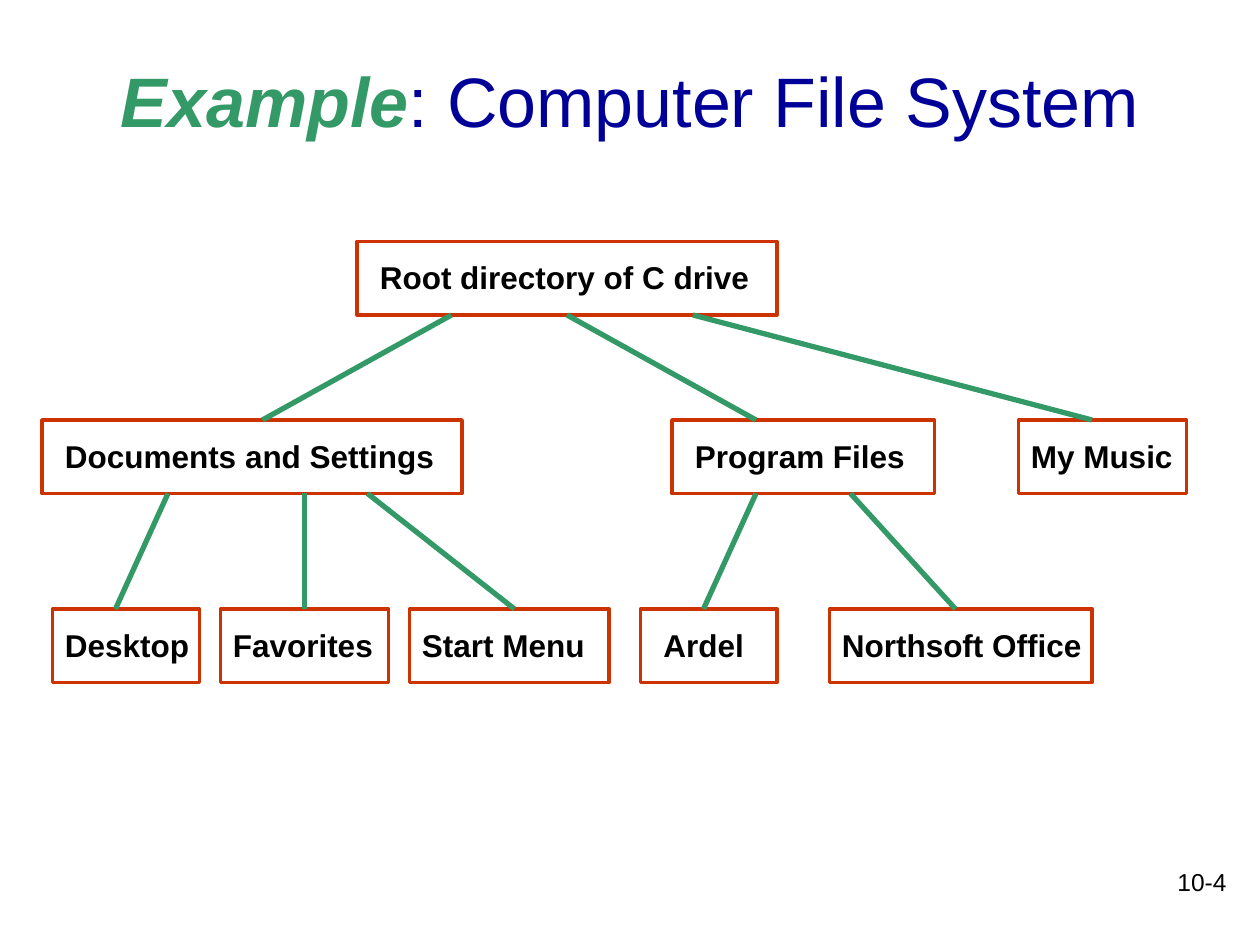
from collections import namedtuple

from lxml import etree
from pptx import Presentation
from pptx.dml.color import RGBColor
from pptx.enum.shapes import MSO_CONNECTOR, MSO_SHAPE
from pptx.enum.text import MSO_ANCHOR, PP_ALIGN
from pptx.oxml.ns import qn
from pptx.util import Inches, Pt

BLACK = RGBColor(0x00, 0x00, 0x00)
NAVY = RGBColor(0x00, 0x00, 0x99)
GREEN = RGBColor(0x33, 0x99, 0x66)
RUST = RGBColor(0xCC, 0x33, 0x00)

# The slide is a grid of 120 columns by 90 rows, twelve to the inch
CELL = Inches(1) // 12
FOLDER_ROWS = 7
LABEL_ROWS = 4.8
LEVEL_ROWS = (23, 40, 58)

# left, width, label_left and label_width are in columns
Folder = namedtuple("Folder", "text level left width label_left label_width")
FOLDERS = {
    "root": Folder("Root directory of C drive", 0, 34, 40, 35, 40),
    "documents": Folder("Documents and Settings", 1, 4, 40, 5, 39),
    "programs": Folder("Program Files", 1, 64, 25, 65, 24),
    "music": Folder("My Music", 1, 97, 16, 97, 18),
    "desktop": Folder("Desktop", 2, 5, 14, 5, 16),
    "favorites": Folder("Favorites", 2, 21, 16, 21, 17),
    "start": Folder("Start Menu", 2, 39, 19, 39, 19),
    "reader": Folder("Ardel", 2, 61, 13, 62, 13),
    "office": Folder("Northsoft Office", 2, 79, 25, 79, 27),
}

# parent, column where the branch leaves it, child, column where it arrives
BRANCHES = [
    ("root", 43, "documents", 25),
    ("root", 54, "programs", 72),
    ("root", 66, "music", 104),
    ("documents", 16, "desktop", 11),
    ("documents", 29, "favorites", 29),
    ("documents", 35, "start", 49),
    ("programs", 72, "reader", 67),
    ("programs", 81, "office", 91),
]


def grid(*cells):
    return [round(cell * CELL) for cell in cells]


def add_run(paragraph, text, size=18, color=BLACK, bold=False, italic=False):
    run = paragraph.add_run()
    run.text = text
    font = run.font
    font.name, font.size = "Arial", Pt(size)
    font.bold, font.italic = bold, italic
    font.color.rgb = color


def add_text(slide, box, runs, align=PP_ALIGN.LEFT, anchor=MSO_ANCHOR.TOP):
    """Place one paragraph; runs is a list of (text, format) pairs."""
    frame = slide.shapes.add_textbox(*grid(*box)).text_frame
    frame.word_wrap = True
    frame.vertical_anchor = anchor
    paragraph = frame.paragraphs[0]
    paragraph.alignment = align
    for text, style in runs:
        add_run(paragraph, text, **style)


def add_title(slide, box):
    runs = [
        ("Example", dict(size=40, color=GREEN, bold=True, italic=True)),
        (": Computer File System", dict(size=40, color=NAVY)),
    ]
    add_text(slide, box, runs, PP_ALIGN.CENTER, MSO_ANCHOR.MIDDLE)


def add_page_number(slide, box):
    add_text(slide, box, [("10-4", dict(size=14))], PP_ALIGN.RIGHT)


def add_folder(slide, folder):
    top = LEVEL_ROWS[folder.level]
    label_box = (folder.label_left, top + 1, folder.label_width, LABEL_ROWS)
    add_text(slide, label_box, [(folder.text, dict(bold=True))])
    frame = slide.shapes.add_shape(
        MSO_SHAPE.RECTANGLE, *grid(folder.left, top, folder.width, FOLDER_ROWS))
    frame.shadow.inherit = False
    frame.fill.background()
    frame.line.color.rgb = RUST
    frame.line.width = Pt(2)
    return frame


def is_middle(folder, column):
    return 2 * column == 2 * folder.left + folder.width


def add_branch(slide, frames, parent, start, child, end):
    start_row = LEVEL_ROWS[FOLDERS[parent].level] + FOLDER_ROWS
    end_row = LEVEL_ROWS[FOLDERS[child].level]
    branch = slide.shapes.add_connector(
        MSO_CONNECTOR.STRAIGHT, *grid(start, start_row, end, end_row))
    branch.line.color.rgb = GREEN
    branch.line.width = Pt(3)
    etree.SubElement(branch._element.spPr, qn("a:effectLst"))
    if is_middle(FOLDERS[parent], start):
        branch.begin_connect(frames[parent], 2)
    if is_middle(FOLDERS[child], end):
        branch.end_connect(frames[child], 0)


def add_tree(slide):
    frames = {key: add_folder(slide, folder) for key, folder in FOLDERS.items()}
    for branch in BRANCHES:
        add_branch(slide, frames, *branch)


def main():
    presentation = Presentation()
    presentation.slide_width, presentation.slide_height = grid(120, 90)
    slide = presentation.slides.add_slide(presentation.slide_layouts[6])
    add_page_number(slide, (93, 82, 25, 6))
    add_title(slide, (9, 2, 102, 15))
    add_tree(slide)
    presentation.save("out.pptx")


if __name__ == "__main__":
    main()
